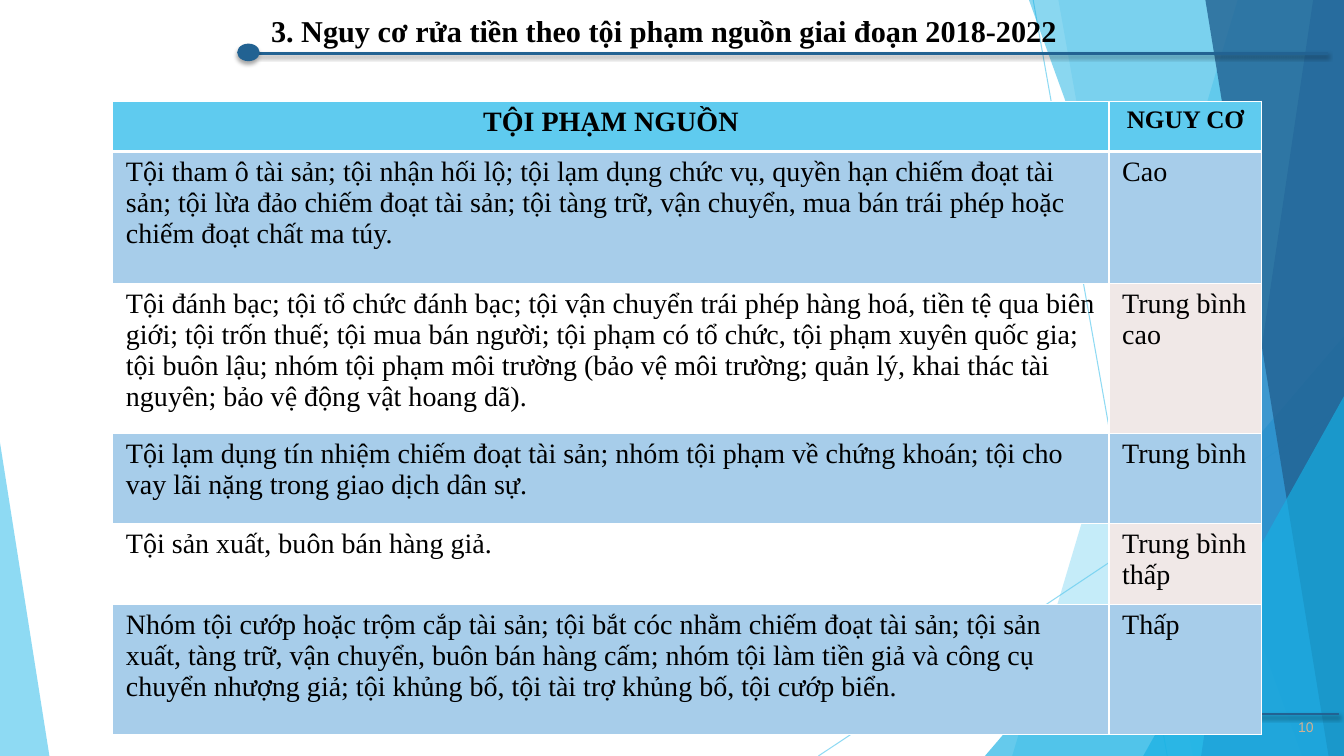
from dataclasses import dataclass

from lxml.etree import SubElement
from pptx import Presentation
from pptx.dml.color import RGBColor
from pptx.enum.shapes import MSO_CONNECTOR, MSO_SHAPE
from pptx.enum.text import MSO_ANCHOR, PP_ALIGN
from pptx.oxml import parse_xml
from pptx.oxml.ns import nsdecls, qn
from pptx.util import Pt


@dataclass(frozen=True)
class Theme:
    sky: str = "5FCBEF"
    cyan: str = "16B0E3"
    blue: str = "2E83C3"
    navy: str = "226292"
    band: str = "A7CDEA"
    blush: str = "F0E8E7"
    sand: str = "D2B191"
    white: str = "FFFFFF"
    black: str = "000000"
    serif: str = "Times New Roman"
    sans: str = "Arial"
    title_size: float = 21.6
    body_size: float = 20
    risk_header_size: float = 18
    number_size: float = 10


THEME = Theme()
WIDTH, HEIGHT = 960, 540

HEADERS = ("TỘI PHẠM NGUỒN", "NGUY CƠ")
RISKS = [
    ("Tội tham ô tài sản; tội nhận hối lộ; tội lạm dụng chức vụ, quyền hạn chiếm đoạt tài sản; "
     "tội lừa đảo chiếm đoạt tài sản; tội tàng trữ, vận chuyển, mua bán trái phép hoặc "
     "chiếm đoạt chất ma túy.", "Cao"),
    ("Tội đánh bạc; tội tổ chức đánh bạc; tội vận chuyển trái phép hàng hoá, tiền tệ qua "
     "biên giới; tội trốn thuế; tội mua bán người; tội phạm có tổ chức, tội phạm xuyên quốc gia; "
     "tội buôn lậu; nhóm tội phạm môi trường (bảo vệ môi trường; quản lý, khai thác tài nguyên; "
     "bảo vệ động vật hoang dã).", "Trung bình cao"),
    ("Tội lạm dụng tín nhiệm chiếm đoạt tài sản; nhóm tội phạm về chứng khoán; tội cho "
     "vay lãi nặng trong giao dịch dân sự.", "Trung bình"),
    ("Tội sản xuất, buôn bán hàng giả.", "Trung bình thấp"),
    ("Nhóm tội cướp hoặc trộm cắp tài sản; tội bắt cóc nhằm chiếm đoạt tài sản; tội sản xuất, "
     "tàng trữ, vận chuyển, buôn bán hàng cấm; nhóm tội làm tiền giả và công cụ chuyển nhượng giả; "
     "tội khủng bố, tội tài trợ khủng bố, tội cướp biển.", "Thấp"),
]
COLUMN_SHARES = (0.867, 0.133)
ROW_HEIGHTS = (36, 94.3, 107.3, 64.1, 57.6, 92.9)


def set_color(color_format, color, opacity=100):
    color_format.rgb = RGBColor.from_string(color)
    if opacity < 100:
        element = color_format._xFill.find(qn("a:srgbClr"))
        SubElement(element, qn("a:alpha"), val=str(opacity * 1000))


def fill_shape(shape, color, opacity=100):
    shape.shadow.inherit = False
    shape.fill.solid()
    set_color(shape.fill.fore_color, color, opacity)
    shape.line.fill.background()


def format_text(paragraph, font_name, size, color, bold=False):
    for run in paragraph.runs:
        run.font.name = font_name
        run.font.size = Pt(size)
        run.font.bold = bold
        run.font.color.rgb = RGBColor.from_string(color)


def add_text(slide, box, text, *style):
    shape = slide.shapes.add_textbox(*map(Pt, box))
    text_frame = shape.text_frame
    text_frame.word_wrap = True
    text_frame.vertical_anchor = MSO_ANCHOR.MIDDLE
    text_frame.text = text
    format_text(text_frame.paragraphs[0], *style)


def add_facets(slide, box):
    """Translucent facets along the right edge, and one in the left corner."""
    left, top, width, height = box
    right, bottom = left + width, top + height

    # Thin crossing lines
    for start_x, start_y, end_x in ((738, top, 833.8), (right, top + 290.2, 584.6)):
        line = slide.shapes.add_connector(
            MSO_CONNECTOR.STRAIGHT, Pt(start_x), Pt(start_y), Pt(end_x), Pt(bottom))
        line.line.fill.solid()
        set_color(line.line.color, THEME.sky)
        solid = line._element.spPr.find(qn("a:ln")).find(qn("a:solidFill"))
        SubElement(solid[0], qn("a:alpha"), val="70000")
        line.line.width = Pt(0.75)
        SubElement(line._element.spPr, qn("a:effectLst"))

    def add_band(top_x, bottom_x, color, opacity):
        builder = slide.shapes.build_freeform(top_x, top, scale=Pt(1))
        builder.add_line_segments([(right, top), (right, bottom), (bottom_x, bottom)])
        fill_shape(builder.convert_to_shape(), color, opacity)

    def add_corner(x, corner_width, corner_height, apex, color, opacity):
        shape = slide.shapes.add_shape(
            MSO_SHAPE.ISOSCELES_TRIANGLE, Pt(x), Pt(bottom - corner_height),
            Pt(corner_width), Pt(corner_height))
        shape.adjustments[0] = apex
        fill_shape(shape, color, opacity)

    add_band(884.2, 722.9, THEME.sky, 36)
    add_band(756, 851.8, THEME.sky, 20)
    add_corner(right - 256.5, 256.5, 300, 1, THEME.cyan, 66)
    add_band(735.1, 929.5, THEME.cyan, 50)
    add_band(938.2, 858.2, THEME.blue, 70)
    add_band(861.1, 949, THEME.navy, 80)
    add_corner(right - 143.4, 143.4, 257, 1, THEME.cyan, 66)
    add_corner(left, 35.3, 223.8, 0, THEME.sky, 70)


def add_rule(slide, box, kind=MSO_SHAPE.RECTANGLE):
    """Navy mark with a soft shadow below it."""
    shape = slide.shapes.add_shape(kind, *map(Pt, box))
    fill_shape(shape, THEME.navy)
    shape.line.color.rgb = RGBColor.from_string(THEME.navy)
    shape.line.width = Pt(1)
    effects = shape._element.spPr.find(qn("a:effectLst"))
    effects.append(parse_xml(
        f'<a:outerShdw {nsdecls("a")} blurRad="{Pt(3)}" dist="{Pt(2)}" dir="5400000" '
        f'rotWithShape="0"><a:srgbClr val="{THEME.black}"><a:alpha val="35000"/></a:srgbClr>'
        '</a:outerShdw>'))


def add_heading(slide, box):
    """Title above a rule that starts with a dot."""
    left, top, width, height = box
    add_rule(slide, (left + 15.1, top + 33.1, width - 15.1, 1.4))
    add_rule(slide, (left, top + 27.4, 15.1, 11.5), MSO_SHAPE.OVAL)
    add_text(slide, (left + 16.6, top, width, height),
             "3. Nguy cơ rửa tiền theo tội phạm nguồn giai đoạn 2018-2022",
             THEME.serif, THEME.title_size, THEME.black, True)


def add_footer(slide, box):
    """Rule and page number."""
    left, top, width, height = box
    add_rule(slide, (left, top, width - 4, 0.7))
    add_text(slide, (left + width - 40, top, 40, height), "10",
             THEME.sans, THEME.number_size, THEME.sand)


def set_borders(cell, top_width, bottom_width):
    properties = cell._tc.get_or_add_tcPr()
    widths = {"a:lnL": 1, "a:lnR": 1, "a:lnT": top_width, "a:lnB": bottom_width}
    for tag, width in widths.items():
        border = SubElement(properties, qn(tag), w=str(Pt(width)))
        solid = SubElement(border, qn("a:solidFill"))
        SubElement(solid, qn("a:srgbClr"), val=THEME.white)


def add_risk_table(slide, box):
    """Predicate offences and their risk level."""
    left, top, width, height = box
    rows = [HEADERS, *RISKS]
    table = slide.shapes.add_table(len(rows), len(HEADERS), *map(Pt, box)).table
    table.horz_banding = False
    for column, share in zip(table.columns, COLUMN_SHARES):
        column.width = Pt(round(width * share, 1))
    for row_index, (texts, row_height) in enumerate(zip(rows, ROW_HEIGHTS)):
        table.rows[row_index].height = Pt(row_height)
        header = row_index == 0
        if header:
            fills = (THEME.sky, THEME.sky)
        else:
            fills = (THEME.band, THEME.band) if row_index % 2 else (None, THEME.blush)
        for column_index, (text, fill) in enumerate(zip(texts, fills)):
            cell = table.cell(row_index, column_index)
            cell.margin_left = cell.margin_right = Pt(9.4)
            cell.margin_top = cell.margin_bottom = Pt(3.6)
            set_borders(cell, 3 if row_index == 1 else 1, 3 if header else 1)
            if fill:
                cell.fill.solid()
                cell.fill.fore_color.rgb = RGBColor.from_string(fill)
            else:
                cell.fill.background()
            cell.text_frame.text = text
            paragraph = cell.text_frame.paragraphs[0]
            paragraph.alignment = PP_ALIGN.CENTER if header else PP_ALIGN.LEFT
            size = THEME.risk_header_size if header and column_index else THEME.body_size
            format_text(paragraph, THEME.serif, size, THEME.black, header)


def main():
    presentation = Presentation()
    presentation.slide_width, presentation.slide_height = Pt(WIDTH), Pt(HEIGHT)
    slide = presentation.slides.add_slide(presentation.slide_layouts[6])
    add_facets(slide, (0, 0, WIDTH, HEIGHT))
    add_footer(slide, (344.2, 509.8, 616, 19.4))
    add_heading(slide, (169.9, 4.3, 778.3, 35.3))
    add_risk_table(slide, (80.6, 72.3, 820.8, sum(ROW_HEIGHTS)))
    presentation.save("out.pptx")


if __name__ == "__main__":
    main()
